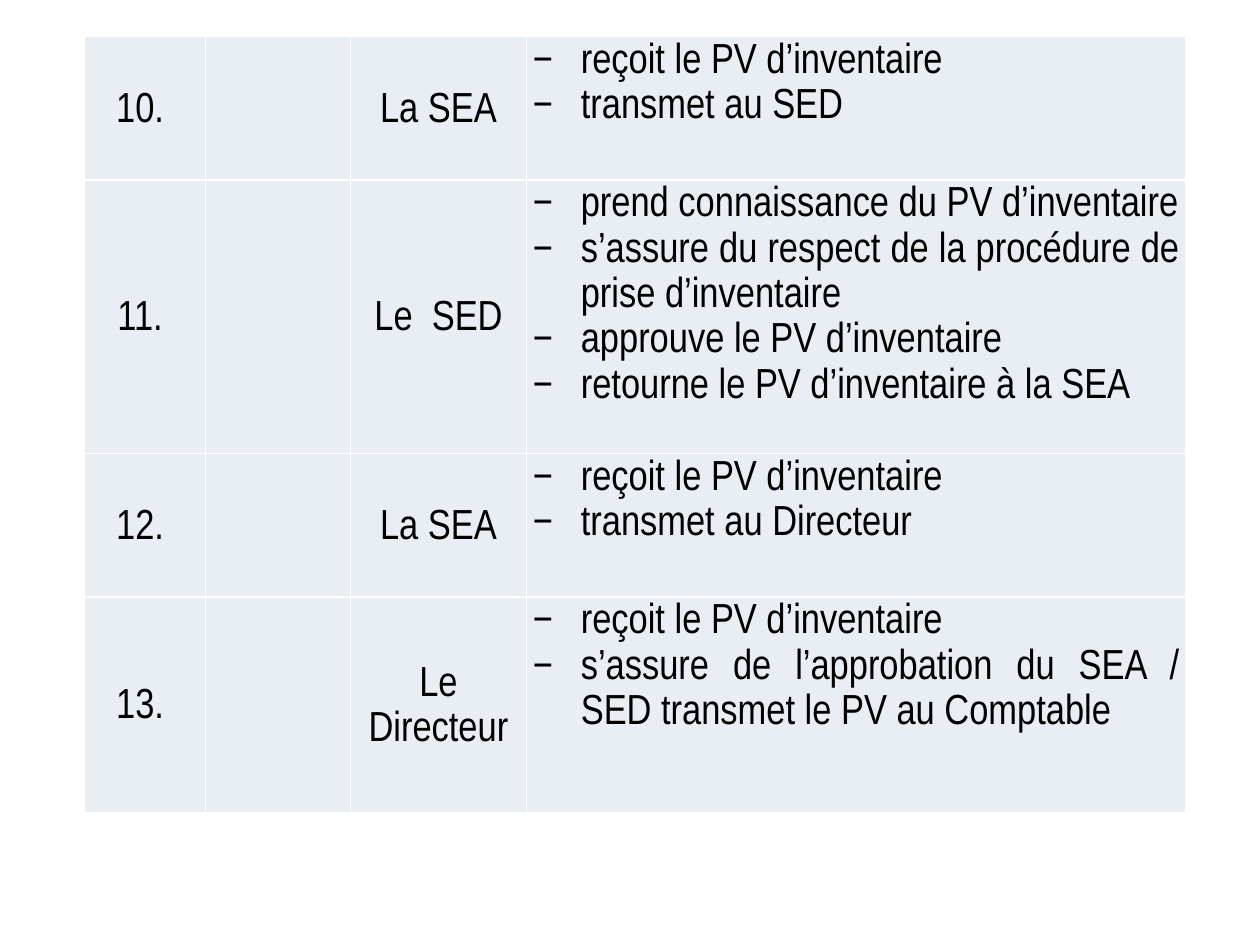
from lxml.etree import SubElement
from pptx import Presentation
from pptx.dml.color import RGBColor
from pptx.enum.text import MSO_ANCHOR, PP_ALIGN
from pptx.oxml import parse_xml
from pptx.oxml.ns import nsdecls, qn
from pptx.util import Inches, Pt

HUES = {"cell": "E9EDF4", "edge": "FFFFFF", "text": "000000"}
FONT = "Arial Narrow"
WIDTHS = [0.96, 1.15, 1.4, 5.23]
INDENT = Inches(0.38)

# Step number, actor, tasks, row height
STEPS = [
    ("10.", "La SEA", ["reçoit le PV d’inventaire", "transmet au SED"], 1.14),
    ("11.", "Le  SED", [
        "prend connaissance du PV d’inventaire",
        "s’assure du respect de la procédure de prise d’inventaire",
        "approuve le PV d’inventaire",
        "retourne le PV d’inventaire à la SEA",
    ], 2.17),
    ("12.", "La SEA", ["reçoit le PV d’inventaire", "transmet au Directeur"], 1.14),
    ("13.", "Le Directeur", [
        "reçoit le PV d’inventaire",
        "s’assure de l’approbation du SEA / SED transmet le PV au Comptable",
    ], 1.71),
]


def style(cell):
    """Fill the cell, draw its borders and set its margins."""
    cell.fill.solid()
    cell.fill.fore_color.rgb = RGBColor.from_string(HUES["cell"])
    cell.margin_left = cell.margin_right = Inches(0.05)
    cell.margin_top = cell.margin_bottom = 0
    props = cell._tc.get_or_add_tcPr()
    for spot, side in enumerate("LRTB"):
        props.insert(spot, parse_xml(
            f'<a:ln{side} {nsdecls("a")} w="{Pt(1)}"><a:solidFill>'
            f'<a:srgbClr val="{HUES["edge"]}"/></a:solidFill></a:ln{side}>'))


def write(cell, lines, align):
    """Write one paragraph a line."""
    cell.text_frame.text = "\n".join(lines)
    for para in cell.text_frame.paragraphs:
        para.alignment = align
        para.line_spacing = 1.15
        font = para.runs[0].font
        font.name = FONT
        font.size = Pt(24)
        font.color.rgb = RGBColor.from_string(HUES["text"])


prs = Presentation()
prs.slide_width = Inches(10)
prs.slide_height = Inches(7.5)
slide = prs.slides.add_slide(prs.slide_layouts[6])

# Table grid
high = sum(step[3] for step in STEPS)
table = slide.shapes.add_table(
    len(STEPS), len(WIDTHS), Inches(0.67), Inches(0.29),
    Inches(sum(WIDTHS)), Inches(high)).table
table.first_row = False
table.horz_banding = False
for col, width in zip(table.columns, WIDTHS):
    col.width = Inches(width)

# Rows of steps
for row, (num, actor, tasks, height) in zip(table.rows, STEPS):
    row.height = Inches(height)
    cells = list(row.cells)
    for cell in cells:
        style(cell)

    # Number and actor, centred
    write(cells[0], [num + " "], PP_ALIGN.CENTER)
    cells[0].text_frame.paragraphs[0].space_before = Pt(6)
    write(cells[2], [actor], PP_ALIGN.CENTER)
    for cell in (cells[0], cells[2]):
        cell.vertical_anchor = MSO_ANCHOR.MIDDLE

    # Tasks, justified with dash bullets
    write(cells[3], tasks, PP_ALIGN.JUSTIFY)
    for para in cells[3].text_frame.paragraphs:
        props = para._p.get_or_add_pPr()
        props.set("marL", str(INDENT))
        props.set("indent", str(-INDENT))
        SubElement(props, qn("a:buFont"), typeface=FONT)
        SubElement(props, qn("a:buChar"), char="−")

prs.save("out.pptx")
